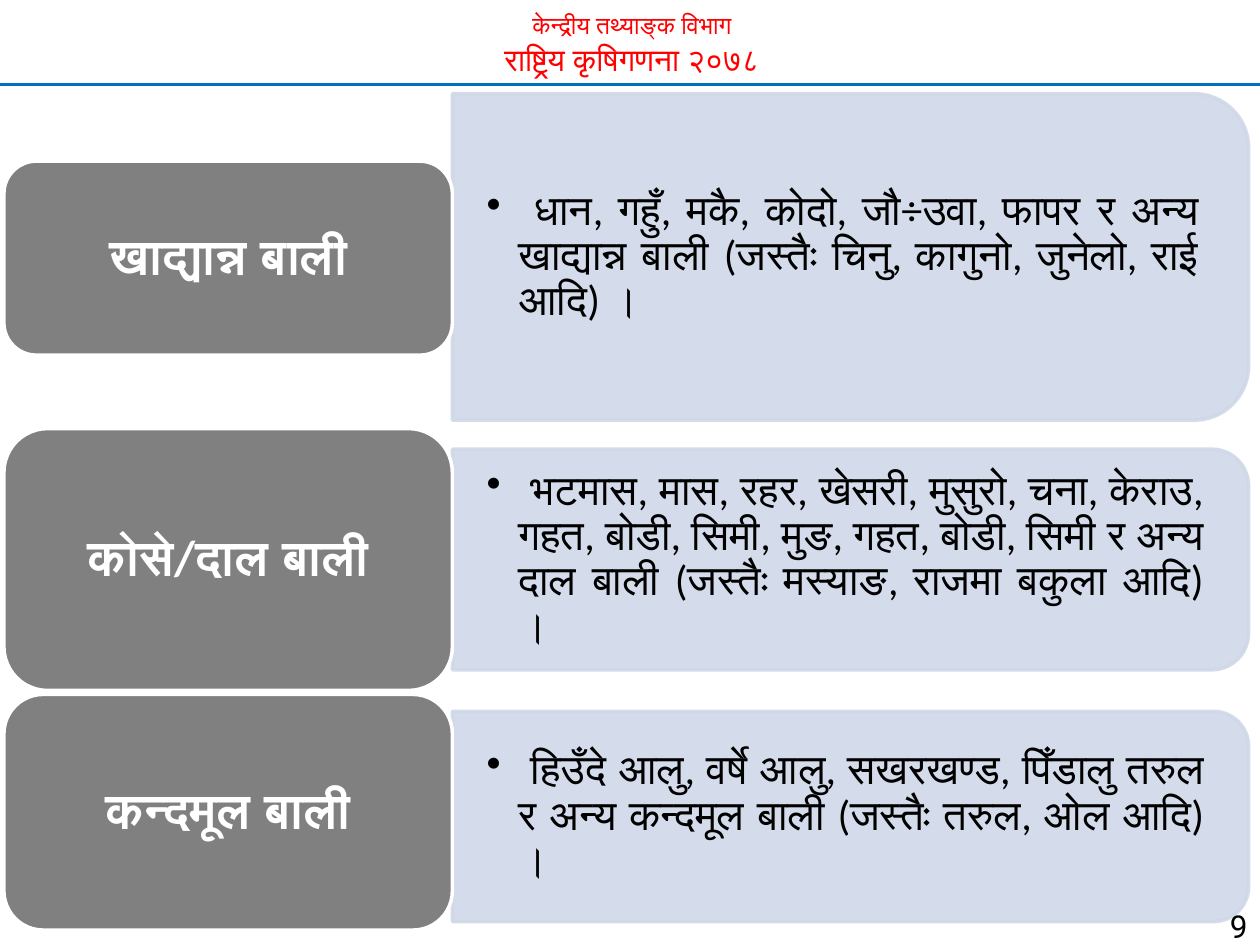
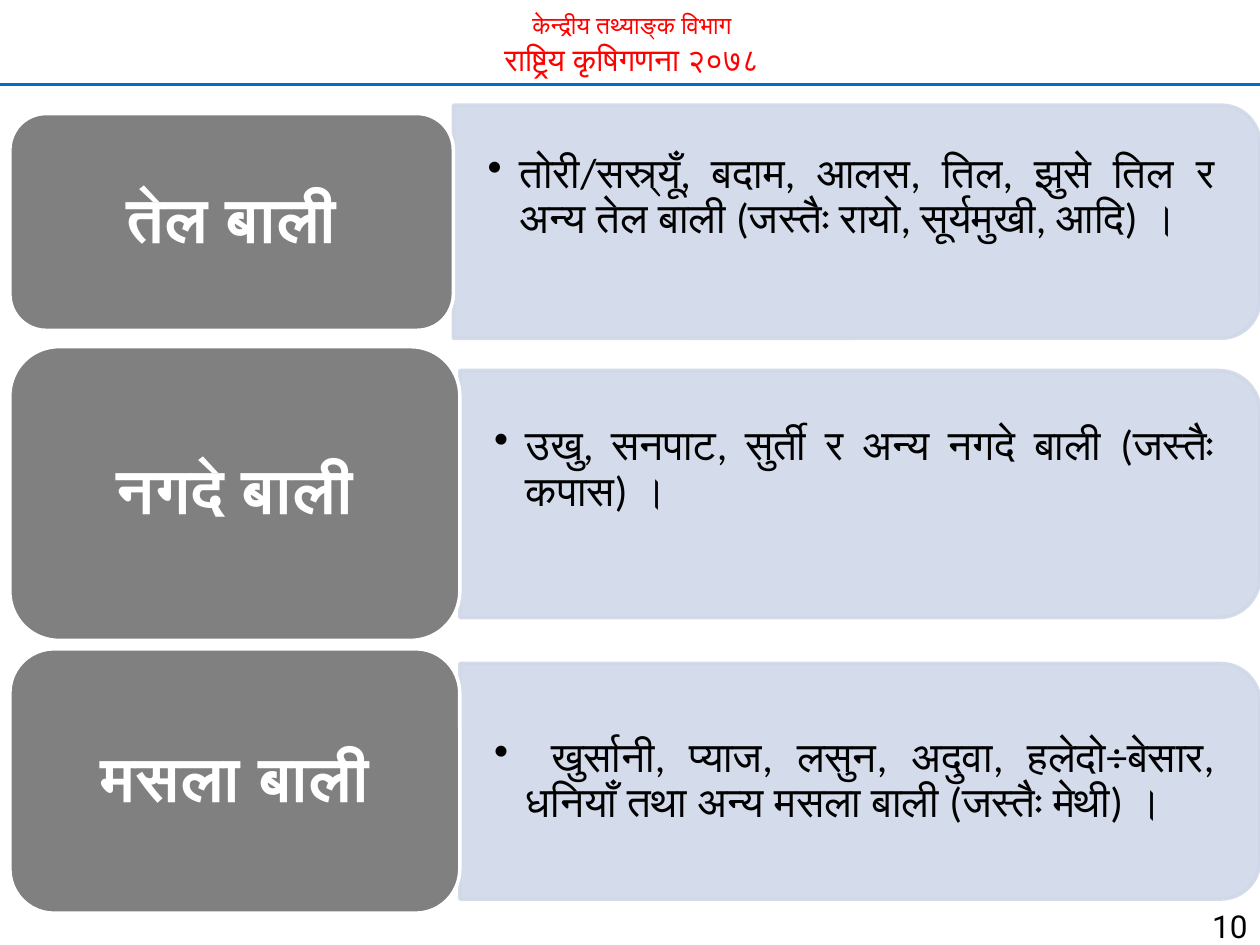
from lxml import etree
from pptx import Presentation
from pptx import util as u
from pptx.dml.color import RGBColor
from pptx.enum import shapes, text
from pptx.oxml.ns import qn

COLOURS = {
    "header": "FF0000",
    "rule": "0070C0",
    "panel": "D0D8E8",
    "label": "808080",
    "white": "FFFFFF",
    "black": "000000",
}
BODY_FONT = "Calibri"
PANEL_OPACITY = 90
CORNER_INSET = 0.0488  # text inset of a rounded corner, as a share of the short side
EMPTY_LINE = 0.97  # room kept free below some crop lists, in cm
HEADER = (("केन्द्रीय तथ्याङ्क विभाग", 14), ("राष्ट्रिय कृषिगणना २०७८", 18))

# Each row: label, crops, row centre, panel height, label top, label height,
# label width, room below the crops (all lengths in cm)
SLIDES = [
    {
        "number": "9", "label_left": 0.08, "panel_right": 25.17,
        "label_size": 28, "label_insets": (0.3, 0.15),
        "rows": [
            ("खाद्यान्न बाली",
             " धान, गहुँ, मकै, कोदो, जौ÷उवा, फापर र अन्य खाद्यान्न बाली "
             "(जस्तैः चिनु, कागुनो, जुनेलो, राई आदि) ।",
             5.18, 6.58, 3.25, 3.91, 9.04, 0),
            ("कोसे/दाल बाली",
             " भटमास, मास, रहर, खेसरी, मुसुरो, चना, केराउ, गहत, बोडी, सिमी, मुङ, "
             "गहत, बोडी, सिमी र अन्य दाल बाली (जस्तैः मस्याङ, राजमा बकुला आदि) ।",
             11.28, 4.45, 8.64, 5.28, 9.04, 0),
            ("कन्दमूल बाली",
             " हिउँदे आलु, वर्षे आलु, सखरखण्ड, पिँडालु तरुल र अन्य कन्दमूल बाली "
             "(जस्तैः तरुल, ओल आदि) ।",
             16.46, 4.24, 14, 4.75, 9.04, 0),
        ],
    },
    {
        "number": "10", "label_left": 0.2, "panel_right": 25.4,
        "label_size": 36, "label_insets": (0.38, 0.18),
        "rows": [
            ("तेल बाली",
             "तोरी/सस्र्यूँ, बदाम, आलस, तिल, झुसे तिल र अन्य तेल बाली "
             "(जस्तैः रायो, सूर्यमुखी, आदि) ।",
             4.47, 4.7, 2.29, 4.37, 8.94, EMPTY_LINE),
            ("नगदे बाली",
             "उखु, सनपाट, सुर्ती र अन्य नगदे बाली (जस्तैः कपास) ।",
             9.96, 4.98, 6.99, 5.92, 9.07, EMPTY_LINE),
            ("मसला बाली",
             " खुर्सानी, प्याज, लसुन, अदुवा, हलेदो÷बेसार, धनियाँ तथा अन्य मसला बाली "
             "(जस्तैः मेथी) ।",
             15.75, 4.75, 13.08, 5.33, 9.07, 0),
        ],
    },
]


def colour(name):
    return RGBColor.from_string(COLOURS[name])


def set_font(paragraph, size, colour_name, name=BODY_FONT, bold=False):
    font = paragraph.font
    font.name, font.size, font.bold = name, u.Pt(size), bold
    font.color.rgb = colour(colour_name)


def set_insets(frame, horizontal, vertical, below=0):
    frame.margin_left = frame.margin_right = u.Cm(horizontal)
    frame.margin_top = u.Cm(vertical)
    frame.margin_bottom = u.Cm(vertical + below)


def add_text_box(slide, left, top, width, height):
    box = slide.shapes.add_textbox(u.Cm(left), u.Cm(top), u.Cm(width), u.Cm(height))
    box.text_frame.word_wrap = True
    return box.text_frame


def add_box(slide, kind, left, top, width, height, fill, line):
    shape = slide.shapes.add_shape(kind, u.Cm(left), u.Cm(top), u.Cm(width), u.Cm(height))
    shape.shadow.inherit = False
    shape.fill.solid()
    shape.fill.fore_color.rgb = colour(fill)
    shape.line.color.rgb = colour(line)
    shape.line.width = u.Pt(2)
    return shape


def make_translucent(shape):
    for srgb in shape._element.spPr.iter(qn("a:srgbClr")):
        etree.SubElement(srgb, qn("a:alpha")).set("val", str(PANEL_OPACITY * 1000))


def add_bullet(paragraph, indent):
    properties = paragraph._p.get_or_add_pPr()
    properties.set("marL", str(u.Cm(indent)))
    properties.set("indent", str(-u.Cm(indent)))
    etree.SubElement(properties, qn("a:buChar")).set("char", "•")


def add_header(slide):
    frame = add_text_box(slide, 1.78, 0.08, 21.92, 1.63)
    for index, (words, size) in enumerate(HEADER):
        paragraph = frame.add_paragraph() if index else frame.paragraphs[0]
        paragraph.text = words
        paragraph.alignment = text.PP_ALIGN.CENTER
        set_font(paragraph, size, "header")
    rule = slide.shapes.add_connector(
        shapes.MSO_CONNECTOR.STRAIGHT, 0, u.Cm(1.7), u.Cm(25.45), u.Cm(1.7))
    rule.line.color.rgb = colour("rule")
    rule.line.width = u.Pt(1.5)
    etree.SubElement(rule._element.spPr, qn("a:effectLst"))


def add_panel(slide, left, centre, width, height, crops, below):
    # The shape is turned by 90 degrees, so its sides are swapped
    panel = add_box(slide, shapes.MSO_SHAPE.ROUND_2_SAME_RECTANGLE,
                    left + (width - height) / 2, centre - width / 2, height, width,
                    "panel", "panel")
    panel.rotation = 90
    make_translucent(panel)

    corner = CORNER_INSET * height
    frame = add_text_box(slide, left, centre - height / 2 + corner,
                         width - corner, height - 2 * corner)
    frame.vertical_anchor = text.MSO_ANCHOR.MIDDLE
    set_insets(frame, 0.69, 0.36, below)
    paragraph = frame.paragraphs[0]
    paragraph.text = crops
    add_bullet(paragraph, 0.64)
    paragraph.alignment = text.PP_ALIGN.JUSTIFY
    paragraph.line_spacing = 0.9
    set_font(paragraph, 24, "black")


def add_label(slide, left, top, width, height, words, size, insets):
    label = add_box(slide, shapes.MSO_SHAPE.ROUNDED_RECTANGLE,
                    left, top, width, height, "label", "white")
    frame = label.text_frame
    frame.word_wrap = True
    frame.vertical_anchor = text.MSO_ANCHOR.MIDDLE
    set_insets(frame, *insets)
    paragraph = frame.paragraphs[0]
    paragraph.text = words
    paragraph.alignment = text.PP_ALIGN.CENTER
    paragraph.line_spacing = 0.9
    set_font(paragraph, size, "white", bold=True)


def add_page_number(slide, number):
    paragraph = add_text_box(slide, 23.44, 17.78, 1.96, 1.07).paragraphs[0]
    paragraph.text = number
    paragraph.alignment = text.PP_ALIGN.RIGHT
    paragraph.line_spacing = 1.5
    set_font(paragraph, 18, "black", "Roboto")


def add_crop_slide(presentation, content):
    slide = presentation.slides.add_slide(presentation.slide_layouts[6])
    add_header(slide)
    left = content["label_left"]
    for (words, crops, centre, panel_height, label_top, label_height,
         label_width, below) in content["rows"]:
        panel_left = left + label_width
        add_panel(slide, panel_left, centre, content["panel_right"] - panel_left,
                  panel_height, crops, below)
        add_label(slide, left, label_top, label_width, label_height, words,
                  content["label_size"], content["label_insets"])
    add_page_number(slide, content["number"])


def main():
    presentation = Presentation()
    presentation.slide_width, presentation.slide_height = u.Cm(25.4), u.Cm(19.05)
    for content in SLIDES:
        add_crop_slide(presentation, content)
    presentation.save("out.pptx")


if __name__ == "__main__":
    main()
